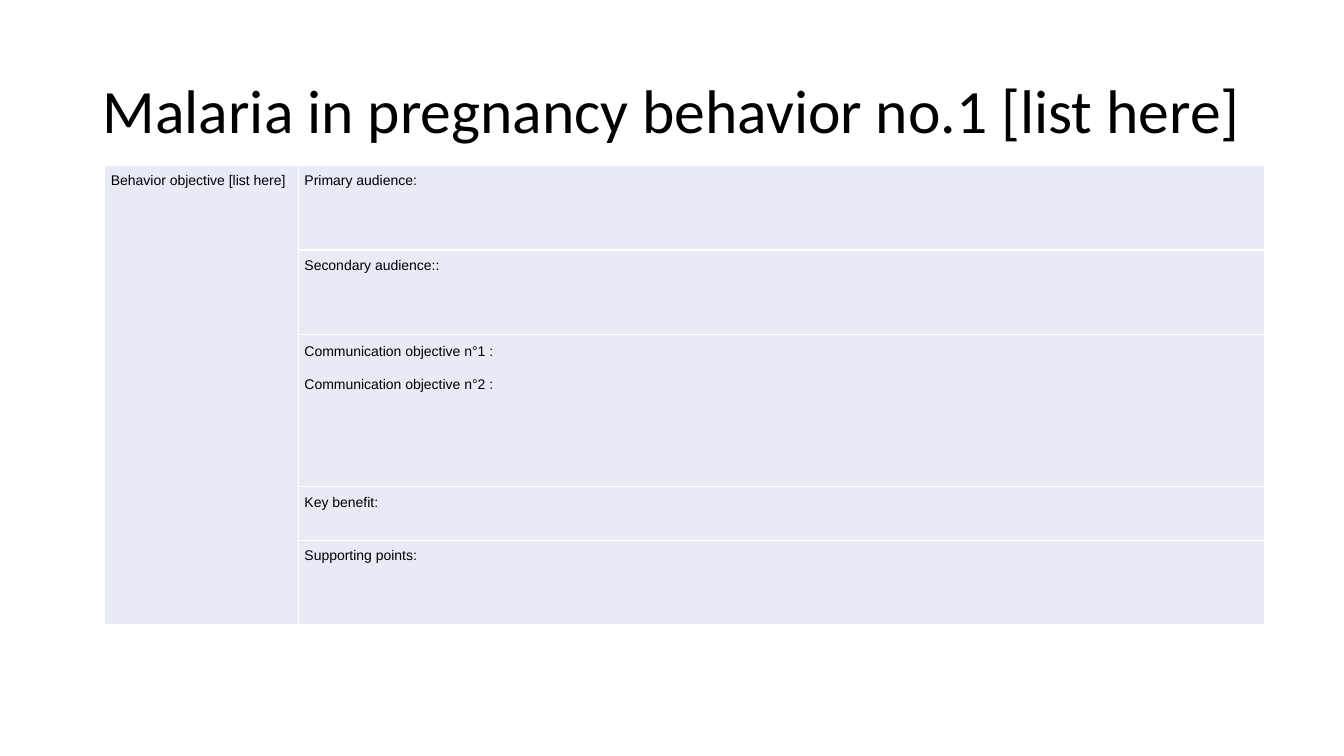
from pptx import Presentation
from pptx.dml.color import RGBColor as RGB
from pptx.enum.text import MSO_ANCHOR as Anchor
from pptx.oxml import parse_xml
from pptx.oxml.ns import nsdecls
from pptx.util import Inches, Pt

COLORS = {"ink": "000000", "cell": "E8EBF5", "rule": "FFFFFF"}


def write(frame, text, size=10, font="Arial", lead=1.06, gap=0):
    for i, line in enumerate(text.split("\n")):
        para = frame.paragraphs[0] if i == 0 else frame.add_paragraph()
        para.line_spacing = lead
        para.space_before = Pt(gap if i else 0)
        run = para.add_run()
        run.text = line
        run.font.size = Pt(size)
        run.font.name = font
        run.font.color.rgb = RGB.from_string(COLORS["ink"])


deck = Presentation()
deck.slide_width = Inches(13.33)
deck.slide_height = Inches(7.5)
slide = deck.slides.add_slide(deck.slide_layouts[6])

title = slide.shapes.add_textbox(Inches(0.92), Inches(0.4), Inches(11.5), Inches(1.45))
title.text_frame.word_wrap = True
title.text_frame.vertical_anchor = Anchor.MIDDLE
write(title.text_frame, "Malaria in pregnancy behavior no.1 [list here]",
      size=44, font="Calibri", lead=0.9)

widths = [1.92, 9.58]
rows = [
    (0.84, "Primary audience:"),
    (0.84, "Secondary audience::"),
    (1.51, "Communication objective n°1 :\nCommunication objective n°2 :"),
    (0.53, "Key benefit:"),
    (0.84, "Supporting points:"),
]
high = sum(row[0] for row in rows)
table = slide.shapes.add_table(len(rows), len(widths), Inches(1.04), Inches(1.64),
                               Inches(sum(widths)), Inches(high)).table
for col, width in zip(table.columns, widths):
    col.width = Inches(width)

for i, (height, text) in enumerate(rows):
    table.rows[i].height = Inches(height)
    for cell in table.rows[i].cells:
        cell.margin_left, cell.margin_right = Inches(0.06), Inches(0.04)
        cell.margin_top = cell.margin_bottom = Inches(0.07)
        props = cell._tc.get_or_add_tcPr()
        for side in ("lnL", "lnR", "lnT", "lnB"):
            props.append(parse_xml(
                f'<a:{side} {nsdecls("a")} w="12700"><a:solidFill>'
                f'<a:srgbClr val="{COLORS["rule"]}"/></a:solidFill></a:{side}>'))
        cell.fill.solid()
        cell.fill.fore_color.rgb = RGB.from_string(COLORS["cell"])
    lead = 1.15 if "\n" in text else 1.06
    write(table.cell(i, 1).text_frame, text, lead=lead, gap=11)

goal = table.cell(0, 0)
goal.merge(table.cell(len(rows) - 1, 0))
write(goal.text_frame, "Behavior objective [list here]")

deck.save("out.pptx")
